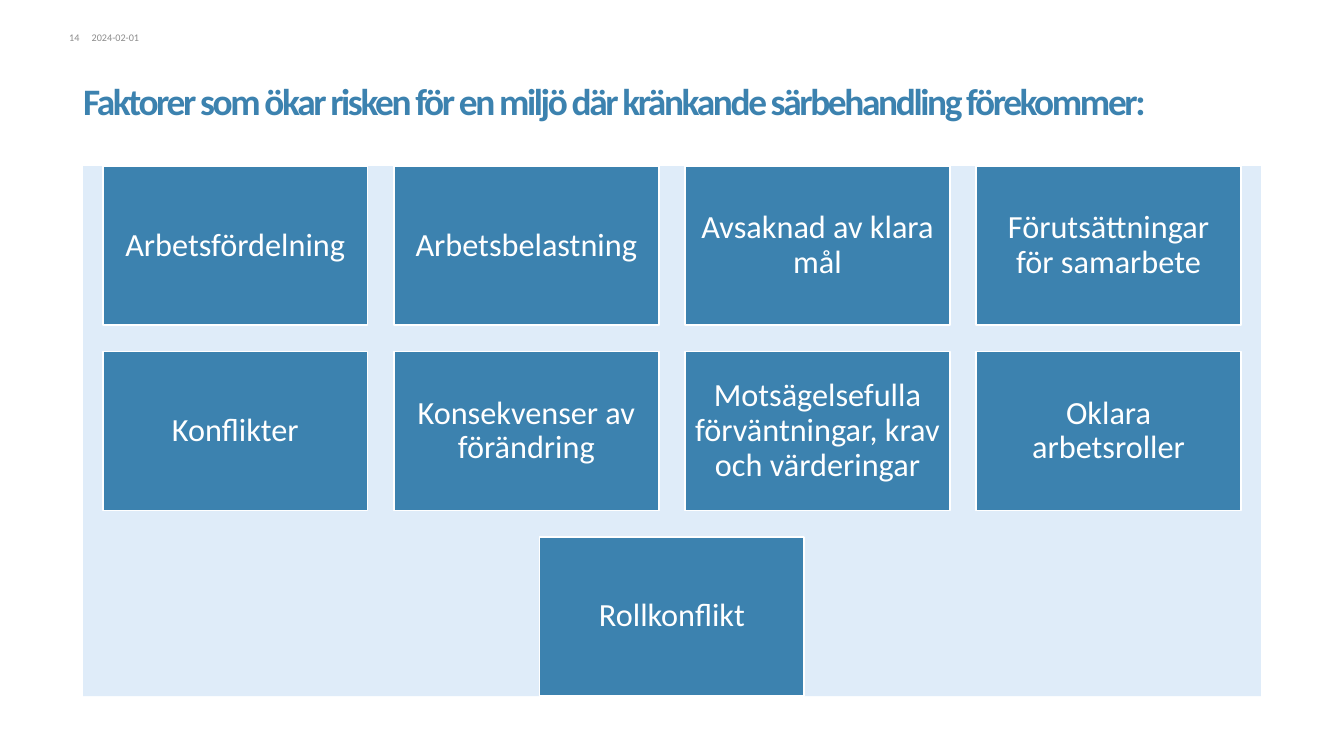
"""Build the slide on risk factors for offensive treatment at work."""
import pptx
import pptx.dml.color
import pptx.enum.shapes
import pptx.enum.text
import pptx.util

TITLE = "Faktorer som ökar risken för en miljö där kränkande särbehandling förekommer:"
FACTOR_ROWS = [
    ["Arbetsfördelning", "Arbetsbelastning", "Avsaknad av klara mål",
     "Förutsättningar för samarbete"],
    ["Konflikter", "Konsekvenser av förändring",
     "Motsägelsefulla förväntningar, krav och värderingar", "Oklara arbetsroller"],
    ["Rollkonflikt"],
]
ALIGN = pptx.enum.text.PP_ALIGN
ANCHOR = pptx.enum.text.MSO_ANCHOR
HEADER = [("14", 91, 39, ALIGN.RIGHT), ("2024-02-01", 150, 87, ALIGN.LEFT)]

EMU_PER_PX = 9144
PAGE_WIDTH, PAGE_HEIGHT = 2199, 1237
PANEL_LEFT, PANEL_TOP, PANEL_WIDTH, PANEL_HEIGHT = 136, 272, 1927, 867
CARD_WIDTH, CARD_HEIGHT = 433, 260
GAP = CARD_WIDTH / 10
BLUE, PALE, GREY, WHITE = "3C82AF", "DFECF9", "8C8C8C", "FFFFFF"


def px(length):
    return pptx.util.Emu(round(length * EMU_PER_PX))


def rgb(value):
    return pptx.dml.color.RGBColor.from_string(value)


def write(shape, text, size, color, align, anchor, margins=(0, 0, 0, 0), spacing=1):
    frame = shape.text_frame
    frame.text = text
    frame.word_wrap = True
    frame.auto_size = pptx.enum.text.MSO_AUTO_SIZE.NONE
    frame.vertical_anchor = anchor
    (frame.margin_left, frame.margin_top,
     frame.margin_right, frame.margin_bottom) = map(px, margins)
    para = frame.paragraphs[0]
    para.alignment = align
    para.line_spacing = spacing
    span = para.runs[0]
    span.font.name = "Calibri"
    span.font.size = pptx.util.Pt(size)
    span.font.color.rgb = rgb(color)
    return span


def add_rectangle(page, left, top, width, height, fill):
    shape = page.shapes.add_shape(pptx.enum.shapes.MSO_SHAPE.RECTANGLE,
                                  px(left), px(top), px(width), px(height))
    shape.shadow.inherit = False
    shape.fill.solid()
    shape.fill.fore_color.rgb = rgb(fill)
    shape.line.fill.background()
    return shape


def add_title(page):
    title = page.shapes.title
    title.left, title.top, title.width, title.height = map(px, (PANEL_LEFT, 96, PANEL_WIDTH, 114))
    span = write(title, TITLE, 44, BLUE, ALIGN.LEFT, ANCHOR.BOTTOM, (0, 0, 0, 8), 0.85)
    span.font.bold = True
    span.font._element.set("spc", "-280")


def add_header(page):
    for text, left, width, align in HEADER:
        box = page.shapes.add_textbox(px(left), px(52), px(width), px(20))
        write(box, text, 12, GREY, align, ANCHOR.TOP)


def add_factors(page):
    for row, factors in enumerate(FACTOR_ROWS):
        row_width = len(factors) * (CARD_WIDTH + GAP) - GAP
        row_left = PANEL_LEFT + (PANEL_WIDTH - row_width) / 2
        top = PANEL_TOP + row * (CARD_HEIGHT + GAP)
        for column, factor in enumerate(factors):
            left = row_left + column * (CARD_WIDTH + GAP)
            card = add_rectangle(page, left, top, CARD_WIDTH, CARD_HEIGHT, BLUE)
            card.line.color.rgb = rgb(WHITE)
            card.line.width = pptx.util.Pt(2)
            write(card, factor, 38, WHITE, ALIGN.CENTER, ANCHOR.MIDDLE, (16,) * 4, 0.9)


def main():
    deck = pptx.Presentation()
    deck.slide_width, deck.slide_height = px(PAGE_WIDTH), px(PAGE_HEIGHT)
    page = deck.slides.add_slide(deck.slide_layouts[5])
    add_title(page)
    add_header(page)
    add_rectangle(page, PANEL_LEFT, PANEL_TOP, PANEL_WIDTH, PANEL_HEIGHT, PALE)
    add_factors(page)
    deck.save("out.pptx")


if __name__ == "__main__":
    main()
